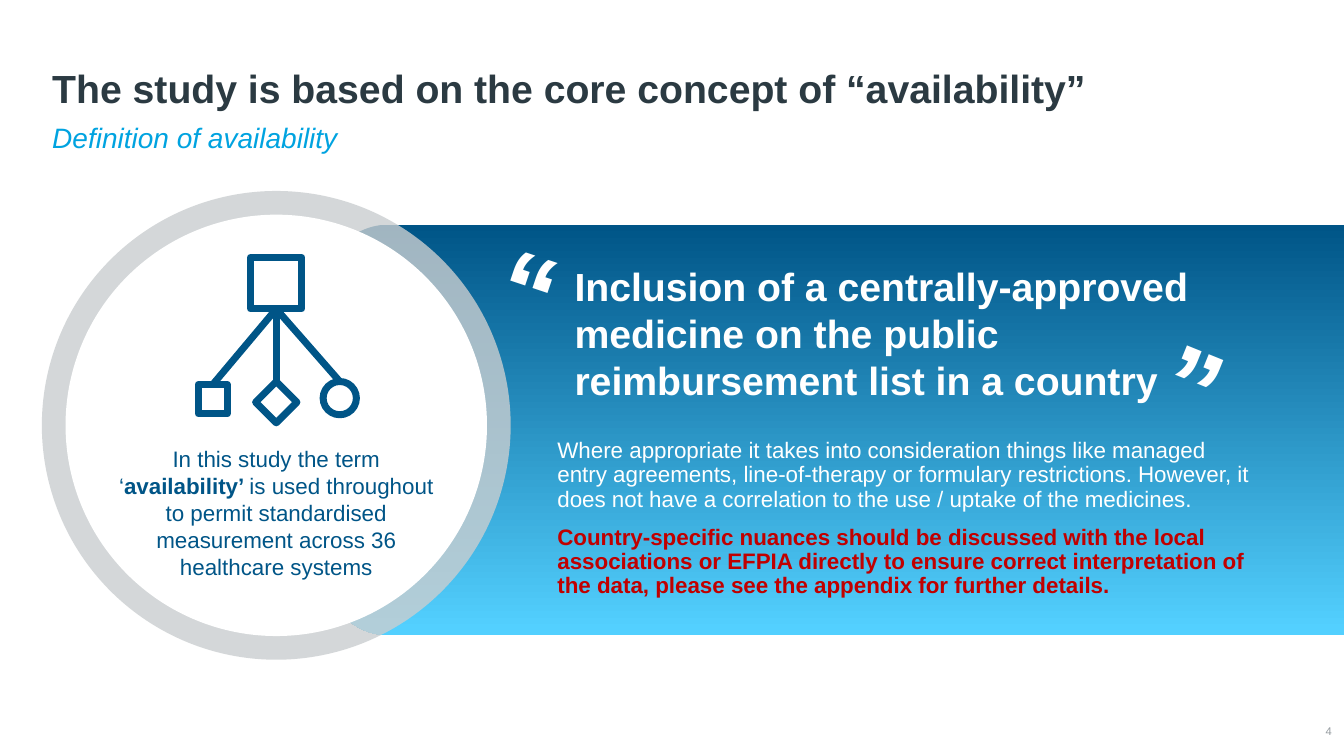
from dataclasses import dataclass

from lxml import etree
from pptx import Presentation
from pptx.dml.color import RGBColor
from pptx.enum.shapes import MSO_CONNECTOR, MSO_SHAPE
from pptx.enum.text import MSO_ANCHOR, PP_ALIGN
from pptx.oxml.ns import qn
from pptx.util import Inches, Pt

RECTANGLE = MSO_SHAPE.RECTANGLE
ROUNDED = MSO_SHAPE.ROUNDED_RECTANGLE
OVAL = MSO_SHAPE.OVAL
DIAMOND = MSO_SHAPE.DIAMOND
STRAIGHT = MSO_CONNECTOR.STRAIGHT
LEFT, CENTER, RIGHT = PP_ALIGN.LEFT, PP_ALIGN.CENTER, PP_ALIGN.RIGHT
TOP, MIDDLE, BOTTOM = MSO_ANCHOR.TOP, MSO_ANCHOR.MIDDLE, MSO_ANCHOR.BOTTOM
SIDE_TOP, SIDE_BOTTOM = 0, 2


@dataclass(frozen=True)
class Theme:
    font: str = "Arial"
    ink: str = "2B3A42"
    accent: str = "00A3E0"
    navy: str = "005587"
    sky: str = "53D0FF"
    ring: str = "CACED0"
    white: str = "FFFFFF"
    warning: str = "C00000"
    muted: str = "959CA0"
    heading: int = 28
    subtitle: int = 20
    body: int = 16
    quote_mark: int = 80
    footer: int = 8
    icon_line: float = 5


THEME = Theme()


def color(code):
    return RGBColor.from_string(code)


def add_text(page, at, paragraphs, size, align=LEFT, anchor=TOP, spacing=None,
             before=0, inset=None, wrap=True, rotation=0):
    """Each paragraph is a list of (text, colour, bold, italic) spans."""
    box = page.shapes.add_textbox(*map(Inches, at))
    box.rotation = rotation
    frame = box.text_frame
    frame.word_wrap = wrap
    frame.vertical_anchor = anchor
    if inset is not None:
        frame.margin_left = frame.margin_right = Inches(inset)
        frame.margin_top = frame.margin_bottom = Inches(inset)
    for index, spans in enumerate(paragraphs):
        para = frame.add_paragraph() if index else frame.paragraphs[0]
        para.alignment = align
        if spacing:
            para.line_spacing = spacing
        if index and before:
            para.space_before = Pt(before)
        for text, code, bold, italic in spans:
            span = para.add_run()
            span.text = text
            span.font.name = THEME.font
            span.font.size = Pt(size)
            span.font.bold = bold
            span.font.italic = italic
            span.font.color.rgb = color(code)
    return box


def add_centered(page, kind, center_x, center_y, size):
    left, top = center_x - size / 2, center_y - size / 2
    shape = page.shapes.add_shape(kind, *map(Inches, (left, top, size, size)))
    shape.shadow.inherit = False
    return shape


def add_disc(page, center_x, center_y, size, code, opacity=100):
    disc = add_centered(page, OVAL, center_x, center_y, size)
    disc.fill.solid()
    disc.fill.fore_color.rgb = color(code)
    disc.line.fill.background()
    if opacity < 100:
        tint = disc.fill._xPr.find(qn("a:solidFill"))[0]
        etree.SubElement(tint, qn("a:alpha"), val=str(opacity * 1000))


def style_icon_line(line):
    line.color.rgb = color(THEME.navy)
    line.width = Pt(THEME.icon_line)
    etree.SubElement(line._get_or_add_ln(), qn("a:round"))


def add_node(page, kind, center_x, center_y, size):
    node = add_centered(page, kind, center_x, center_y, size)
    node.fill.background()
    style_icon_line(node.line)
    return node


def add_branch(page, parent, child):
    branch = page.shapes.add_connector(STRAIGHT, 0, 0, 0, 0)
    branch.begin_connect(parent, SIDE_BOTTOM)
    branch.end_connect(child, SIDE_TOP)
    style_icon_line(branch.line)
    etree.SubElement(branch._element.spPr, qn("a:effectLst"))


def add_band(page):
    band = page.shapes.add_shape(ROUNDED, *map(Inches, (3.25, 2.23, 10.77, 4.07)))
    band.adjustments[0] = 0.146
    band.shadow.inherit = False
    band.line.fill.background()
    band.fill.gradient()
    band.fill.gradient_angle = 270
    ramp = ((0, THEME.navy), (0.99, THEME.sky))
    for stop, (position, code) in zip(band.fill.gradient_stops, ramp):
        stop.position = position
        stop.color.rgb = color(code)


def add_tree_icon(page, center_x):
    root = add_node(page, RECTANGLE, center_x, 2.81, 0.51)
    leaves = ((RECTANGLE, -0.63, 3.96, 0.29),
              (DIAMOND, 0, 3.99, 0.41),
              (OVAL, 0.63, 3.95, 0.33))
    for kind, offset, center_y, size in leaves:
        leaf = add_node(page, kind, center_x + offset, center_y, size)
        add_branch(page, root, leaf)


def main():
    deck = Presentation()
    deck.slide_width, deck.slide_height = Inches(13.33), Inches(7.5)
    page = deck.slides.add_slide(deck.slide_layouts[6])

    # Heading and page number
    add_text(page, (12.82, 7.16, 0.39, 0.19), [[("4", THEME.muted, False, False)]],
             THEME.footer, align=RIGHT, anchor=MIDDLE, inset=0)
    add_text(page, (0.42, 1.18, 12.4, 0.44),
             [[("Definition of availability", THEME.accent, False, True)]],
             THEME.subtitle, spacing=0.9)
    add_text(page, (0.42, 0.32, 12.4, 0.84),
             [[("The study is based on the core concept of “availability”",
                THEME.ink, True, False)]],
             THEME.heading, anchor=BOTTOM, spacing=0.9)

    # Gradient band with the ringed disc over its left end
    add_band(page)
    disc_x, disc_y = 2.74, 4.22
    add_disc(page, disc_x, disc_y, 4.65, THEME.ring, opacity=80)
    add_disc(page, disc_x, disc_y, 4.18, THEME.white)
    add_text(page, (1.01, 4.37, 3.46, 1.45),
             [[("In this study the term ‘", THEME.navy, False, False),
               ("availability’ ", THEME.navy, True, False),
               ("is used throughout to permit standardised measurement "
                "across 36 healthcare systems", THEME.navy, False, False)]],
             THEME.body, align=CENTER)
    add_tree_icon(page, disc_x)

    # Definition and its notes
    add_text(page, (5.43, 4.31, 7.16, 1.85),
             [[("Where appropriate it takes into consideration things like managed "
                "entry agreements, line-of-therapy or formulary restrictions. "
                "However, it does not have a correlation to the use / uptake "
                "of the medicines.", THEME.white, False, False)],
              [("Country-specific nuances should be discussed with the local "
                "associations or EFPIA directly to ensure correct interpretation "
                "of the data, please see the appendix for further details.",
                THEME.warning, True, False)]],
             THEME.body, spacing=0.9, before=10)
    add_text(page, (5.6, 2.55, 6.4, 1.51),
             [[("Inclusion of a centrally-approved medicine on the public "
                "reimbursement list in a country", THEME.white, True, False)]],
             THEME.heading)

    # Quotation marks around the definition
    for left, top, rotation in ((4.87, 2.14, 18.5), (11.58, 2.76, 202)):
        add_text(page, (left, top, 0.76, 1.45), [[("“", THEME.white, True, False)]],
                 THEME.quote_mark, wrap=False, rotation=rotation)

    deck.save("out.pptx")


if __name__ == "__main__":
    main()
